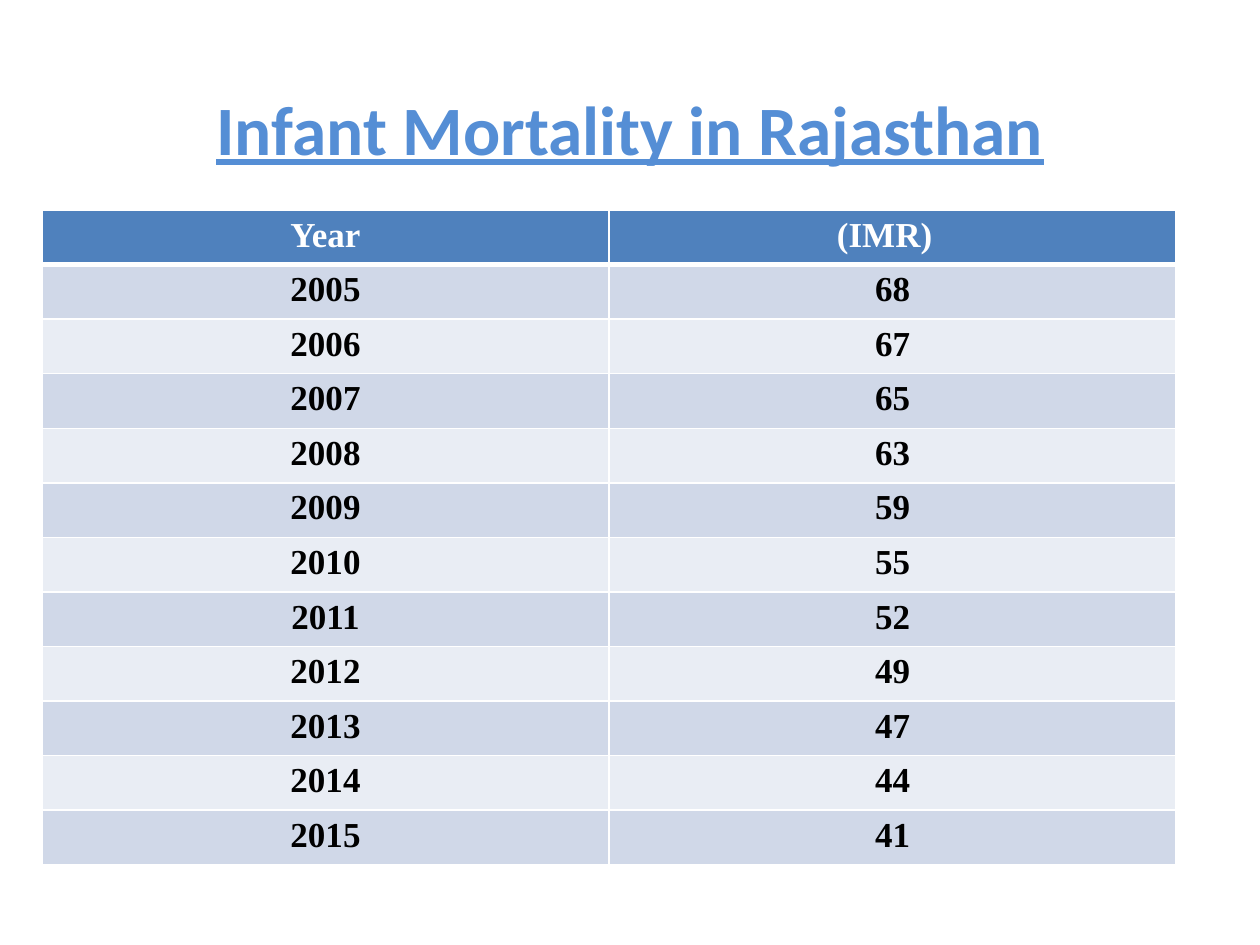
"""Build a slide with a table of infant mortality rates in Rajasthan by year."""
from lxml.etree import SubElement
from pptx import Presentation
from pptx.dml.color import RGBColor
from pptx.enum.text import MSO_ANCHOR, PP_ALIGN
from pptx.oxml.ns import qn
from pptx.util import Pt

TITLE = "Infant Mortality in Rajasthan"
HEADER = ("Year", "(IMR)")
RATES = (68, 67, 65, 63, 59, 55, 52, 49, 47, 44, 41)
FIRST_YEAR = 2005
THEME = {
    "title": "558ED5", "header": "4F81BD", "bands": ("D0D8E8", "E9EDF4"),
    "header_text": "FFFFFF", "body_text": "000000", "border": "FFFFFF",
    "title_font": "Calibri", "table_font": "Times New Roman",
    "title_size": 39.6, "table_size": 20,
}
LEFT, TOP, COL_W, ROW_H = 24, 120, 324, 31.2
INSET, HEADER_RIGHT_INSET = 5, 14


def style_paragraph(p, font, size, color):
    p.alignment = PP_ALIGN.CENTER
    for r in p.runs:
        r.font.name, r.font.size, r.font.bold = font, Pt(size), True
        r.font.color.rgb = RGBColor.from_string(color)


def add_borders(cell, bottom, top):
    tc_pr = cell._tc.get_or_add_tcPr()
    for side, width in (("L", 1), ("R", 1), ("T", top), ("B", bottom)):
        ln = SubElement(tc_pr, qn(f"a:ln{side}"), w=str(Pt(width)))
        fill = SubElement(ln, qn("a:solidFill"))
        SubElement(fill, qn("a:srgbClr"), val=THEME["border"])


def fill_cell(cell, text, row):
    is_header = row == 0
    color = THEME["header"] if is_header else THEME["bands"][(row - 1) % 2]
    add_borders(cell, bottom=3 if is_header else 1, top=3 if row == 1 else 1)
    cell.fill.solid()
    cell.fill.fore_color.rgb = RGBColor.from_string(color)
    cell.margin_left = cell.margin_right = Pt(INSET)
    cell.margin_top = cell.margin_bottom = 0
    p = cell.text_frame.paragraphs[0]
    p.text = str(text)
    p.line_spacing = 1.15
    style_paragraph(p, THEME["table_font"], THEME["table_size"],
                    THEME["header_text" if is_header else "body_text"])


def add_title(s):
    sp = s.shapes.title
    sp.left, sp.top, sp.width, sp.height = Pt(36), Pt(42), Pt(648), Pt(102)
    tf = sp.text_frame
    tf.text = TITLE
    tf.vertical_anchor = MSO_ANCHOR.MIDDLE
    tf.margin_bottom = Pt(44)
    p = tf.paragraphs[0]
    style_paragraph(p, THEME["title_font"], THEME["title_size"], THEME["title"])
    p.runs[0].font.underline = True


def add_rate_table(s):
    rows = [HEADER, *enumerate(RATES, FIRST_YEAR)]
    table = s.shapes.add_table(len(rows), len(HEADER), Pt(LEFT), Pt(TOP),
                               Pt(COL_W * len(HEADER)), Pt(ROW_H * len(rows))).table
    for i, row in enumerate(rows):
        table.rows[i].height = Pt(ROW_H)
        for j, text in enumerate(row):
            fill_cell(table.cell(i, j), text, i)
    table.cell(0, 1).margin_right = Pt(HEADER_RIGHT_INSET)


def main():
    prs = Presentation()
    prs.slide_width, prs.slide_height = Pt(720), Pt(540)
    s = prs.slides.add_slide(prs.slide_layouts[5])
    add_title(s)
    add_rate_table(s)
    prs.save("out.pptx")


if __name__ == "__main__":
    main()
